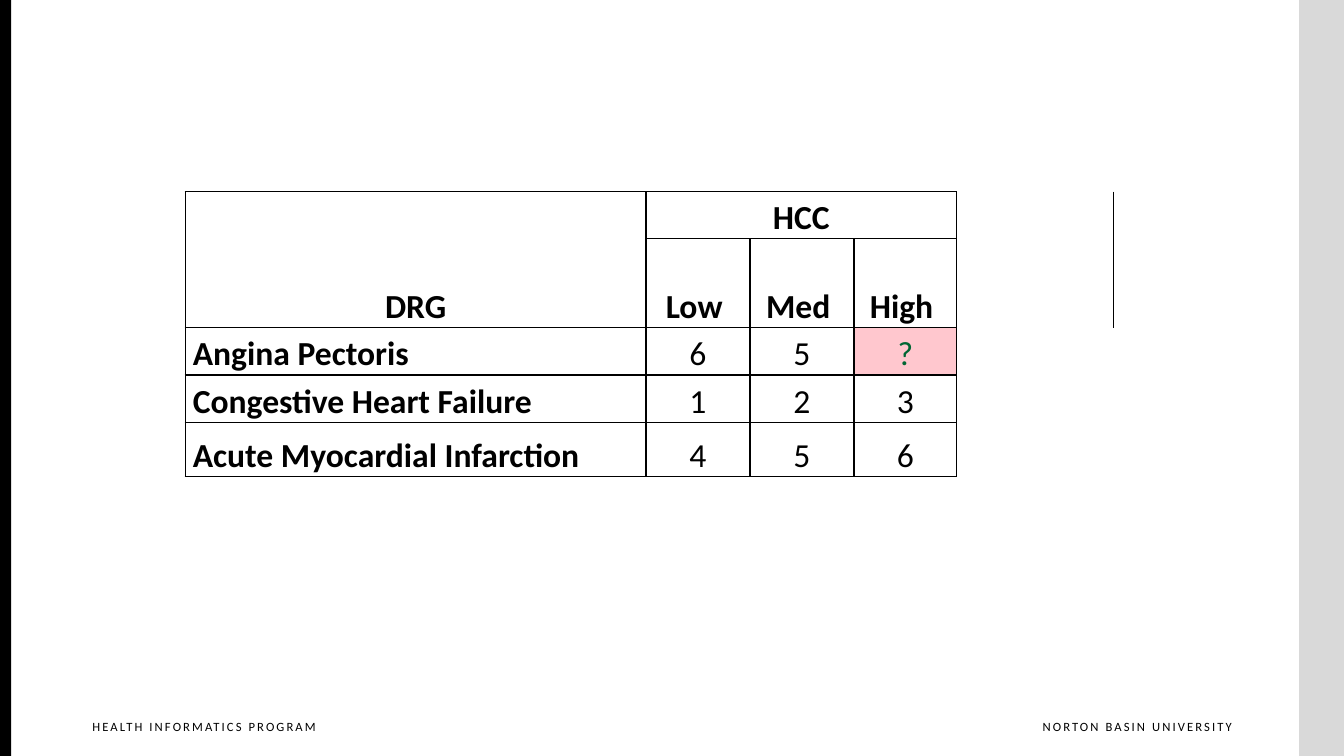
from lxml import etree
from pptx import Presentation
from pptx import util as u
from pptx.dml.color import RGBColor
from pptx.enum import shapes, text
from pptx.oxml.ns import qn

BLACK = RGBColor(0x00, 0x00, 0x00)
GRAY = RGBColor(0xD9, 0xD9, 0xD9)
PINK = RGBColor(0xFF, 0xC7, 0xCE)
GREEN = RGBColor(0x00, 0x66, 0x33)
NO_STYLE = "{2D5ABB26-0587-4C30-8999-92F81FD0307C}"
LEFT, CENTER, RIGHT = text.PP_ALIGN.LEFT, text.PP_ALIGN.CENTER, text.PP_ALIGN.RIGHT


def write(paragraph, words, align, size, color=BLACK, bold=False):
    run = paragraph.add_run()
    run.text = words
    paragraph.alignment = align
    run.font.color.rgb = color
    font_format = {"name": "Calibri", "size": u.Pt(size), "bold": bold}
    for name, value in font_format.items():
        setattr(run.font, name, value)
    return run


def add_borders(cell, sides):
    properties = cell._tc.get_or_add_tcPr()
    for side in sides:
        line = etree.SubElement(properties, qn(f"a:ln{side}"), w=str(u.Pt(1)))
        fill = etree.SubElement(line, qn("a:solidFill"))
        etree.SubElement(fill, qn("a:srgbClr"), val=str(BLACK))


presentation = Presentation()
presentation.slide_width = u.Cm(33.87)
presentation.slide_height = u.Cm(19.05)
slide = presentation.slides.add_slide(presentation.slide_layouts[6])

# Side bands
for left, width, color in [(32.74, 1.13, GRAY), (0, 0.28, BLACK)]:
    band = slide.shapes.add_shape(
        shapes.MSO_SHAPE.RECTANGLE, u.Cm(left), 0, u.Cm(width), presentation.slide_height)
    band.shadow.inherit = False
    band.fill.solid()
    band.fill.fore_color.rgb = color
    band.line.fill.background()

# Footer
footers = [
    (25.07, 5.97, "NORTON BASIN UNIVERSITY", RIGHT),
    (2.08, 6.45, "HEALTH INFORMATICS PROGRAM", LEFT),
]
for left, width, words, align in footers:
    footer = slide.shapes.add_textbox(u.Cm(left), u.Cm(17.98), u.Cm(width), u.Cm(0.84))
    footer.text_frame.word_wrap = True
    footer.text_frame.margin_right = 0
    run = write(footer.text_frame.paragraphs[0], words, align, 9)
    run.font._element.set("spc", "150")

# Table grid
column_widths = [11.61, 2.62, 2.62, 2.59, 3.96]
row_heights = [1.19, 2.24, 1.19, 1.19, 1.37, 1.19]
frame = slide.shapes.add_table(
    len(row_heights), len(column_widths), u.Cm(4.67), u.Cm(4.83),
    u.Cm(sum(column_widths)), u.Cm(sum(row_heights)))
table = frame.table
table.first_row = table.horz_banding = False
table._tbl.tblPr.find(qn("a:tableStyleId")).text = NO_STYLE
for column, width in zip(table.columns, column_widths):
    column.width = u.Cm(width)
for row, height in zip(table.rows, row_heights):
    row.height = u.Cm(height)

# Table contents
drg_rows = [
    ["DRG", "HCC", "", ""],
    ["", "Low ", "Med ", "High "],
    ["Angina Pectoris", "6", "5", "?"],
    ["Congestive Heart Failure", "1", "2", "3"],
    ["Acute Myocardial Infarction", "4", "5", "6"],
]
cell_format = {
    "vertical_anchor": text.MSO_ANCHOR.BOTTOM,
    "margin_left": u.Cm(0.19), "margin_right": u.Cm(0.19),
    "margin_top": 0, "margin_bottom": 0,
}
for row_index, values in enumerate(drg_rows):
    for column_index, value in enumerate(values):
        cell = table.cell(row_index, column_index)
        for name, setting in cell_format.items():
            setattr(cell, name, setting)
        add_borders(cell, "LRTB")
        unknown = value == "?"
        if unknown:
            cell.fill.solid()
            cell.fill.fore_color.rgb = PINK
        if value:
            is_header = row_index < 2
            is_label = column_index == 0
            paragraph = cell.text_frame.paragraphs[0]
            paragraph.line_spacing = 1.07
            write(paragraph, value, LEFT if is_label and not is_header else CENTER, 24,
                  GREEN if unknown else BLACK, is_header or is_label)
    add_borders(table.cell(row_index, 4), "L")
for column_index in range(4):
    add_borders(table.cell(5, column_index), "T")

# Merged headers
for first, last in [((0, 0), (1, 0)), ((0, 1), (0, 3)), ((0, 4), (1, 4))]:
    table.cell(*first).merge(table.cell(*last))

presentation.save("out.pptx")
